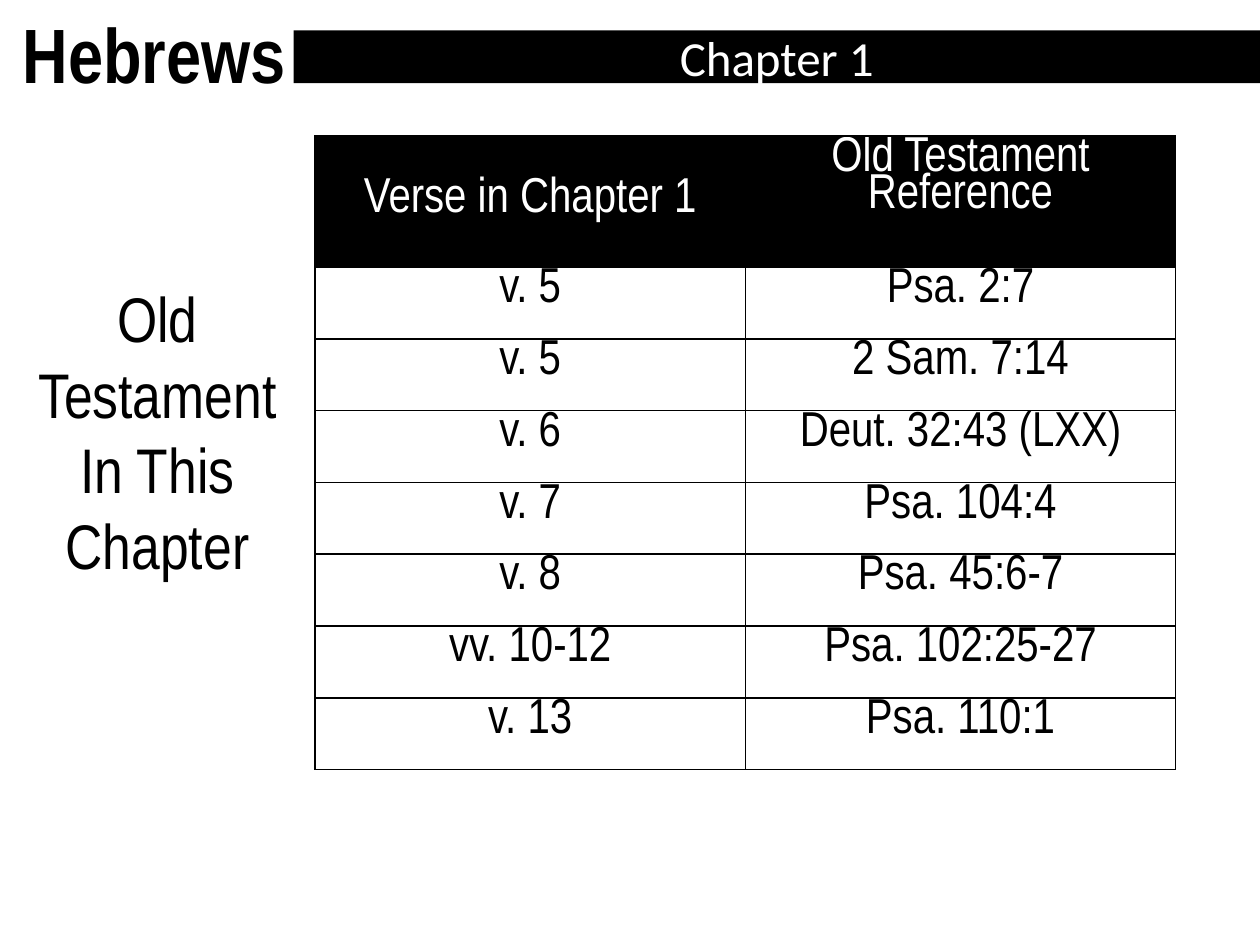
import pptx
import pptx.dml.color
import pptx.enum.shapes
import pptx.enum.text
import pptx.oxml
import pptx.oxml.ns
import pptx.util
from pptx.util import Inches

COLOURS = {"black": "000000", "white": "FFFFFF"}
NARROW = "Arial Narrow"
REFERENCES = [
    ("Verse in Chapter 1", "Old Testament Reference"),
    ("v. 5", "Psa. 2:7"),
    ("v. 5", "2 Sam. 7:14"),
    ("v. 6", "Deut. 32:43 (LXX)"),
    ("v. 7", "Psa. 104:4"),
    ("v. 8", "Psa. 45:6-7"),
    ("vv. 10-12", "Psa. 102:25-27"),
    ("v. 13", "Psa. 110:1"),
]


def colour(name):
    """Return the named colour as an RGB value."""
    return pptx.dml.color.RGBColor.from_string(COLOURS[name])


def place(shape, left, top, width, height):
    """Move and size a shape, in inches."""
    shape.left, shape.top = Inches(left), Inches(top)
    shape.width, shape.height = Inches(width), Inches(height)


def write(text_frame, text, size, font=NARROW, ink="black", bold=False, align="CENTER", spacing=1.0):
    """Set the text and format every paragraph and run."""
    text_frame.text = text
    for paragraph in text_frame.paragraphs:
        paragraph.alignment = getattr(pptx.enum.text.PP_ALIGN, align)
        paragraph.line_spacing = spacing
        paragraph.space_before = pptx.util.Pt(0)
        for run in paragraph.runs:
            run.font.name = font
            run.font.size = pptx.util.Pt(size)
            run.font.bold = bold
            run.font.color.rgb = colour(ink)


def fill_placeholder(shape, position, text, size, **style):
    """Place a template placeholder and write plain text without bullets."""
    place(shape, *position)
    text_frame = shape.text_frame
    text_frame.word_wrap = True
    text_frame.auto_size = pptx.enum.text.MSO_AUTO_SIZE.SHAPE_TO_FIT_TEXT
    text_frame.vertical_anchor = pptx.enum.text.MSO_ANCHOR.TOP
    text_frame.text = text
    write(text_frame, text, size, **style)
    for paragraph in text_frame.paragraphs:
        properties = paragraph._p.get_or_add_pPr()
        properties.set("marL", "0")
        properties.set("indent", "0")
        properties.append(pptx.oxml.parse_xml(f"<a:buNone {pptx.oxml.ns.nsdecls('a')}/>"))


def add_bar(slide, text):
    """Add the black chapter bar."""
    bar = slide.shapes.add_shape(
        pptx.enum.shapes.MSO_SHAPE.RECTANGLE, Inches(2.33), Inches(0.24), Inches(7.67), Inches(0.42)
    )
    bar.shadow.inherit = False
    bar.fill.solid()
    bar.fill.fore_color.rgb = colour("black")
    bar.line.fill.background()
    bar.text_frame.word_wrap = True
    bar.text_frame.vertical_anchor = pptx.enum.text.MSO_ANCHOR.MIDDLE
    write(bar.text_frame, text, 28, font="Calibri", ink="white")


def add_borders(cell):
    """Draw a one-point black line on each side of a cell."""
    properties = cell._tc.get_or_add_tcPr()
    for index, side in enumerate(("lnL", "lnR", "lnT", "lnB")):
        properties.insert(index, pptx.oxml.parse_xml(
            f'<a:{side} {pptx.oxml.ns.nsdecls("a")} w="12700"><a:solidFill>'
            f'<a:srgbClr val="{COLOURS["black"]}"/></a:solidFill></a:{side}>'
        ))


def add_reference_table(slide):
    """Add the table of verses and their Old Testament references."""
    header_height, row_height = 1.04, 0.57
    height = header_height + row_height * (len(REFERENCES) - 1)
    frame = slide.shapes.add_table(
        len(REFERENCES), 2, Inches(2.5), Inches(1.08), Inches(6.83), Inches(height)
    )
    table = frame.table
    for row_index, texts in enumerate(REFERENCES):
        header = row_index == 0
        table.rows[row_index].height = Inches(header_height if header else row_height)
        for column_index, text in enumerate(texts):
            cell = table.cell(row_index, column_index)
            cell.fill.solid()
            cell.fill.fore_color.rgb = colour("black" if header else "white")
            write(cell.text_frame, text, 28, ink="white" if header else "black", spacing=0.8)
            add_borders(cell)
    table.cell(0, 0).vertical_anchor = pptx.enum.text.MSO_ANCHOR.MIDDLE


def main():
    """Build and save the slide."""
    presentation = pptx.Presentation()
    presentation.slide_width, presentation.slide_height = Inches(10), Inches(7.5)
    slide = presentation.slides.add_slide(presentation.slide_layouts[1])
    title, body = slide.placeholders
    fill_placeholder(body, (0, 2.17, 2.5, 2.52), "Old\nTestament\nIn This\nChapter", 36)
    add_reference_table(slide)
    fill_placeholder(title, (0.08, 0, 9.92, 0.84), "Hebrews", 44, bold=True, align="LEFT")
    add_bar(slide, "Chapter 1")
    presentation.save("out.pptx")


if __name__ == "__main__":
    main()
